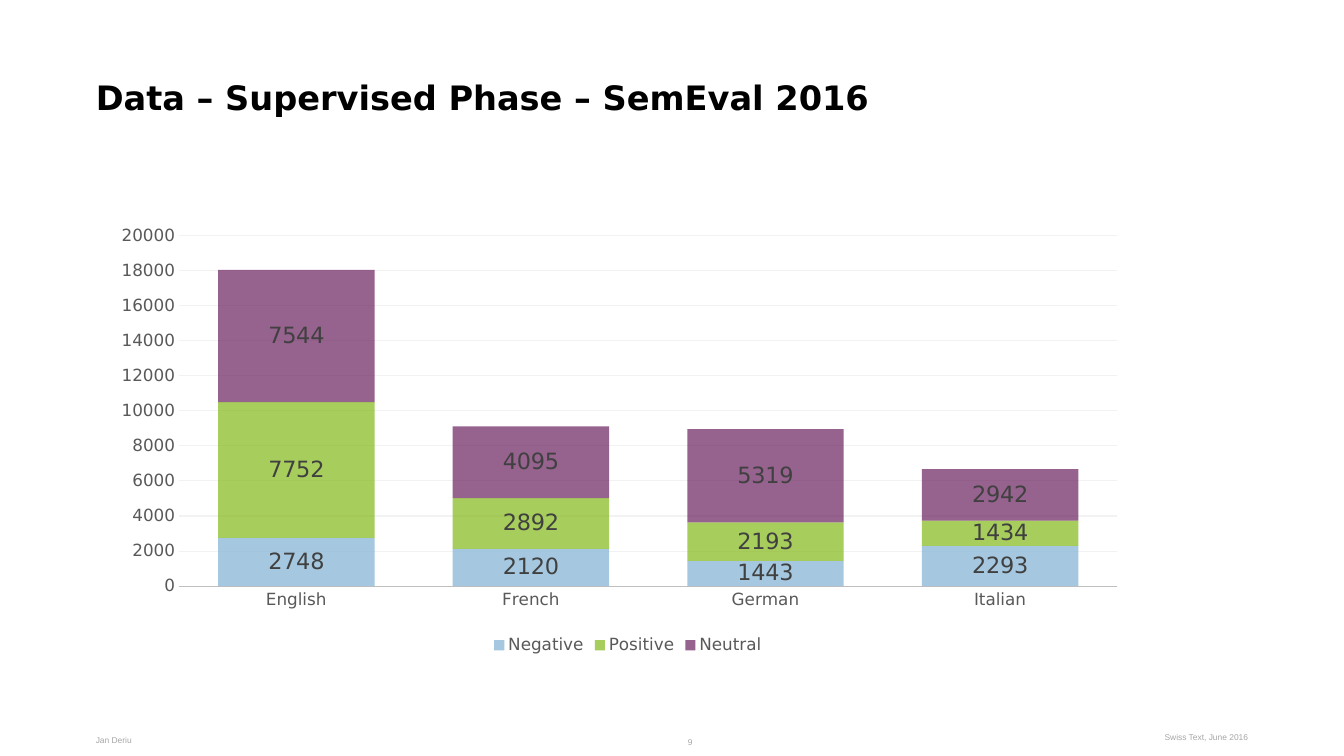
from lxml import etree
from pptx import Presentation
from pptx.chart.data import CategoryChartData
from pptx.dml.color import RGBColor
from pptx.enum.chart import XL_CHART_TYPE as CT, XL_LABEL_POSITION as LP
from pptx.enum.chart import XL_LEGEND_POSITION as LEG, XL_TICK_MARK as TICK
from pptx.enum.text import MSO_ANCHOR as ANCHOR, PP_ALIGN as AL
from pptx.oxml import parse_xml
from pptx.oxml.ns import nsdecls, qn
from pptx.util import Pt

SANS = "DejaVu Sans"


def style(font, size, color, name=SANS, bold=False):
    font.size, font.name, font.bold = Pt(size), name, bold
    font.color.rgb = RGBColor.from_string(color)


def fill_frame(sp, text, align, inset=(0, 0)):
    """Set a top-anchored line of text and return its run; inset is (x, y) in points."""
    tf = sp.text_frame
    tf.word_wrap = True
    tf.vertical_anchor = ANCHOR.TOP
    tf.margin_left = tf.margin_right = Pt(inset[0])
    tf.margin_top = tf.margin_bottom = Pt(inset[1])
    p = tf.paragraphs[0]
    p.alignment = align
    r = p.add_run()
    r.text = text
    return r


prs = Presentation()
prs.slide_width, prs.slide_height = Pt(960), Pt(540)
s = prs.slides.add_slide(prs.slide_layouts[5])

# Title
title = s.shapes.title
title.left, title.top, title.width, title.height = Pt(68.4), Pt(54.7), Pt(669.6), Pt(61.2)
r = fill_frame(title, "Data – Supervised Phase – SemEval 2016", AL.LEFT)
style(r.font, 24, "000000", bold=True)

# Footer
footer = [
    ("Jan Deriu", 68.4, 524.9, 92.2, 17.3, AL.LEFT, (0, 0)),
    ("9", 396, 522.7, 105.8, 13.7, AL.RIGHT, (7.2, 3.6)),
    ("Swiss Text, June 2016", 799.2, 522.7, 92.2, 17.3, AL.RIGHT, (0, 0)),
]
for text, x, y, w, h, align, inset in footer:
    sp = s.shapes.add_textbox(Pt(x), Pt(y), Pt(w), Pt(h))
    style(fill_frame(sp, text, align, inset).font, 6, "A6A6A6", "Arial")

# Stacked chart of tweets per language
sentiments = [
    ("Negative", "80B2D3", (2748, 2120, 1443, 2293)),
    ("Positive", "83B819", (7752, 2892, 2193, 1434)),
    ("Neutral", "6A205F", (7544, 4095, 5319, 2942)),
]
data = CategoryChartData()
data.categories = ["English", "French", "German", "Italian"]
for name, color, values in sentiments:
    data.add_series(name, values)
chart = s.shapes.add_chart(
    CT.COLUMN_STACKED, Pt(84.2), Pt(123.1), Pt(728.6), Pt(347.8), data).chart
style(chart.font, 10, "000000")
chart.has_title = False
chart.has_legend = True
chart.legend.position = LEG.BOTTOM
chart.legend.include_in_layout = False
style(chart.legend.font, 12, "595959")

plot = chart.plots[0]
plot.gap_width, plot.overlap = 50, 100
plot.vary_by_categories = False
for series, (name, color, values) in zip(plot.series, sentiments):
    fill = series.format.fill
    fill.solid()
    fill.fore_color.rgb = RGBColor.from_string(color)
    clr = series.format.fill._xPr.find(".//" + qn("a:srgbClr"))
    etree.SubElement(clr, qn("a:alpha"), val="70000")
    series.format.line.fill.background()
    labels = series.data_labels
    labels.show_value = True
    labels.position = LP.CENTER
    style(labels.font, 16, "404040")

cat_axis, val_axis = chart.category_axis, chart.value_axis
for axis in (cat_axis, val_axis):
    axis.major_tick_mark = axis.minor_tick_mark = TICK.NONE
    style(axis.tick_labels.font, 12, "595959")
cat_axis.has_major_gridlines = False
val_axis.has_major_gridlines = True
val_axis.minimum_scale, val_axis.maximum_scale, val_axis.major_unit = 0, 20000, 2000
val_axis.format.line.fill.background()
for line, color in ((cat_axis.format.line, "BFBFBF"),
                    (val_axis.major_gridlines.format.line, "F2F2F2")):
    line.width = Pt(0.75)
    line.color.rgb = RGBColor.from_string(color)

# Fixed inner plot area, as fractions of the chart
area = chart.element.find(".//" + qn("c:plotArea"))
for old in area.findall(qn("c:layout")):
    area.remove(old)
area.insert(0, parse_xml(
    f'<c:layout {nsdecls("c")}><c:manualLayout><c:layoutTarget val="inner"/>'
    '<c:xMode val="edge"/><c:yMode val="edge"/><c:x val="0.06"/><c:y val="0.13"/>'
    '<c:w val="0.92"/><c:h val="0.72"/></c:manualLayout></c:layout>'))

prs.save("out.pptx")
